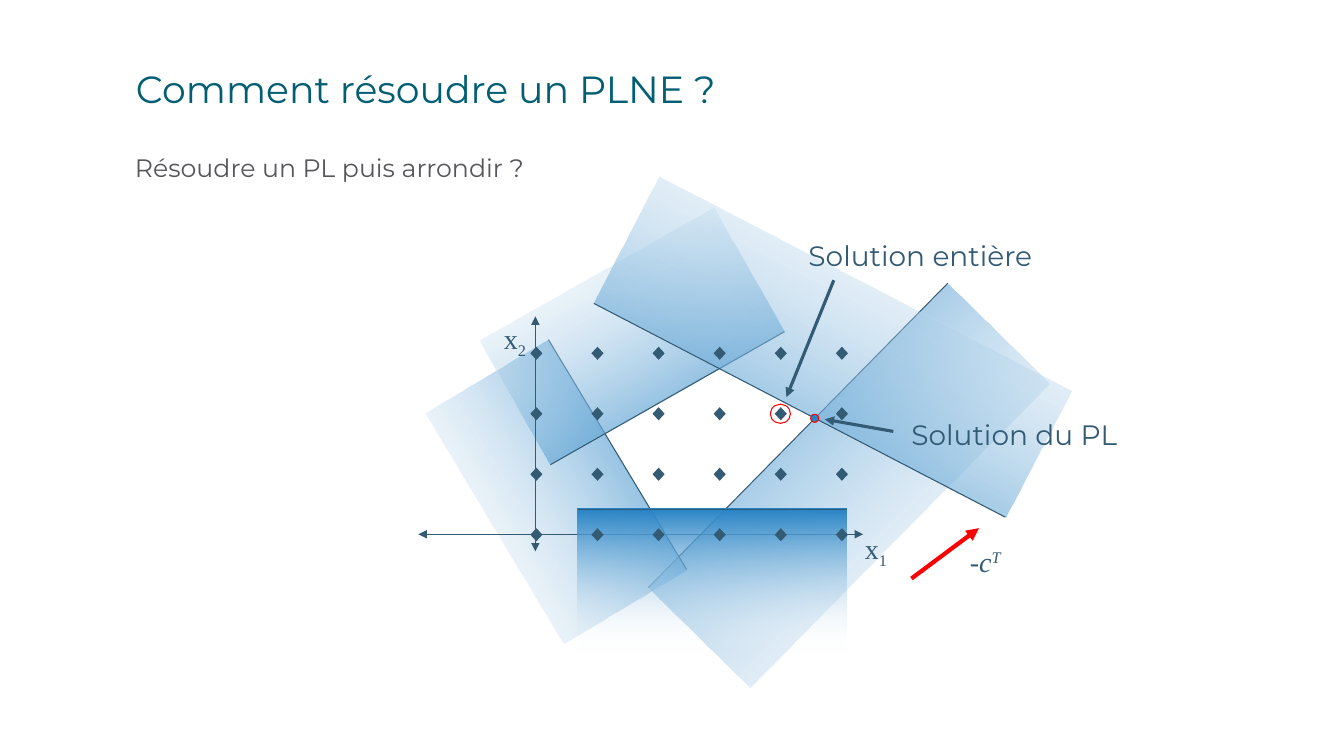
from math import atan2, cos, degrees, hypot, sin

from lxml.etree import SubElement
from pptx import Presentation
from pptx.dml.color import RGBColor
from pptx.enum.shapes import MSO_CONNECTOR, MSO_SHAPE
from pptx.enum.text import MSO_ANCHOR, PP_ALIGN
from pptx.oxml.ns import qn
from pptx.util import Inches, Pt

# Content
NAVY, BLUE, RED, WHITE = "335B74", "2683C6", "FF0000", "FFFFFF"
SANS, SERIF = "Montserrat", "Times New Roman"

TITLE = "Comment résoudre un PLNE ?"
QUESTION = "Résoudre un PL puis arrondir ?"

# Each constraint is a boundary (start, end); the excluded side is shaded
CONSTRAINTS = [
    ((6.43, 5.83), (9.4, 2.81)),
    ((5.44, 3.37), (6.81, 5.65)),
    ((7.78, 3.29), (5.46, 4.61)),
    ((9.97, 5.13), (5.89, 3.01)),
]
FLOOR = ((5.73, 5.05), (8.4, 5.05))
SHADE_DEPTH = 1.42

AXES = [((5.31, 3.14), (5.31, 5.47)), ((4.15, 5.3), (8.56, 5.3))]
OBJECTIVE = ((9.04, 5.74), (9.71, 5.24))
POINTERS = [((8.86, 4.28), (8.18, 4.16)), ((8.27, 2.78), (7.8, 3.94))]

# Integer points: origin, pitch and count of the lattice
LATTICE_LEFT, LATTICE_TOP = 5.26, 3.44
PITCH_X, PITCH_Y = 0.606, 0.6
COLUMNS, ROWS = 6, 4

# Text, baseline-shifted text, shift in %, box, format
LABELS = [
    ("-c", "T", 30, (9.52, 5.35, 0.67, 0.44), {"font": SERIF, "italic": True}),
    ("x", "1", -25, (8.48, 5.22, 0.83, 0.44), {"font": SERIF}),
    ("x", "2", -25, (4.9, 3.14, 0.5, 0.44), {"font": SERIF}),
    ("Solution du PL", "", 0, (8.94, 4.09, 2.42, 0.44), {}),
    ("Solution entière", "", 0, (7.92, 2.32, 2.48, 0.44), {}),
]

prs = Presentation()
prs.slide_width, prs.slide_height = Inches(13.33), Inches(7.5)
slide = prs.slides.add_slide(prs.slide_layouts[6])


def color(hex_string):
    return RGBColor.from_string(hex_string)


def add_text(text, box, shifted="", shift=0, font=SANS, size=20, ink=NAVY,
             italic=False, spacing=1.0, inset=0.05):
    frame = slide.shapes.add_textbox(*map(Inches, box)).text_frame
    frame.word_wrap = True
    frame.vertical_anchor = MSO_ANCHOR.TOP
    frame.margin_left = frame.margin_right = Inches(0.1)
    frame.margin_top = frame.margin_bottom = Inches(inset)
    paragraph = frame.paragraphs[0]
    paragraph.alignment = PP_ALIGN.LEFT
    paragraph.line_spacing = spacing
    for part, baseline in ((text, 0), (shifted, shift)):
        if not part:
            continue
        run = paragraph.add_run()
        run.text = part
        run.font.name, run.font.size = font, Pt(size)
        run.font.italic = italic
        run.font.color.rgb = color(ink)
        if baseline:
            run._r.get_or_add_rPr().set("baseline", str(baseline * 1000))


def add_line(start, end, ink=NAVY, width=0.75, arrows=()):
    line = slide.shapes.add_connector(
        MSO_CONNECTOR.STRAIGHT, *map(Inches, (*start, *end)))
    line.line.color.rgb = color(ink)
    line.line.width = Pt(width)
    for arrow in arrows:
        SubElement(line.line._get_or_add_ln(), qn("a:" + arrow)).set("type", "triangle")
    SubElement(line._element.spPr, qn("a:effectLst"))


def add_figure(kind, box, fill=None, outline=None):
    figure = slide.shapes.add_shape(kind, *map(Inches, box))
    figure.shadow.inherit = False
    if fill:
        figure.fill.solid()
        figure.fill.fore_color.rgb = color(fill)
    else:
        figure.fill.background()
    if outline:
        figure.line.color.rgb = color(outline)
        figure.line.width = Pt(0.75)
    else:
        figure.line.fill.background()
    return figure


def add_half_plane(start, end):
    """Shade the side to the right of the boundary, fading away from it."""
    dx, dy = end[0] - start[0], end[1] - start[1]
    length, angle = hypot(dx, dy), atan2(dy, dx)
    center_x = (start[0] + end[0]) / 2 - sin(angle) * SHADE_DEPTH / 2
    center_y = (start[1] + end[1]) / 2 + cos(angle) * SHADE_DEPTH / 2
    shade = add_figure(MSO_SHAPE.RECTANGLE, (
        center_x - length / 2, center_y - SHADE_DEPTH / 2, length, SHADE_DEPTH))
    shade.rotation = degrees(angle) % 360
    shade.fill.gradient()
    shade.fill.gradient_angle = 270
    for stop, ink in zip(shade.fill.gradient_stops, (BLUE, WHITE)):
        stop.color.rgb = color(ink)
    faded = shade._element.spPr.xpath(".//a:gs[2]/a:srgbClr")[0]
    SubElement(faded, qn("a:alpha")).set("val", "0")
    add_line(start, end)


# Headings
add_text(QUESTION, (1.24, 1.45, 11.5, 0.47), size=18, ink="57565B",
         spacing=0.9, inset=0.1)
add_text(TITLE, (1.25, 0.65, 11.5, 0.75), size=27, ink="025E73", spacing=0.9)

# Constraints, objective and axes
for boundary in CONSTRAINTS:
    add_half_plane(*boundary)
add_line(*OBJECTIVE, ink=RED, width=3, arrows=["tailEnd"])
for axis in AXES:
    add_line(*axis, arrows=["headEnd", "tailEnd"])
add_half_plane(*FLOOR)

# Integer points
for row in range(ROWS):
    for column in range(COLUMNS):
        add_figure(MSO_SHAPE.DIAMOND, (
            LATTICE_LEFT + column * PITCH_X, LATTICE_TOP + row * PITCH_Y,
            0.12, 0.13), fill=NAVY)

# Integer solution and linear solution
add_figure(MSO_SHAPE.OVAL, (7.64, 4.01, 0.2, 0.19), outline=RED)
add_figure(MSO_SHAPE.OVAL, (8.04, 4.11, 0.08, 0.08), fill=BLUE, outline=RED)

# Labels and pointers
for text, shifted, shift, box, style in LABELS:
    add_text(text, box, shifted, shift, **style)
for pointer in POINTERS:
    add_line(*pointer, width=2.25, arrows=["tailEnd"])

prs.save("out.pptx")
